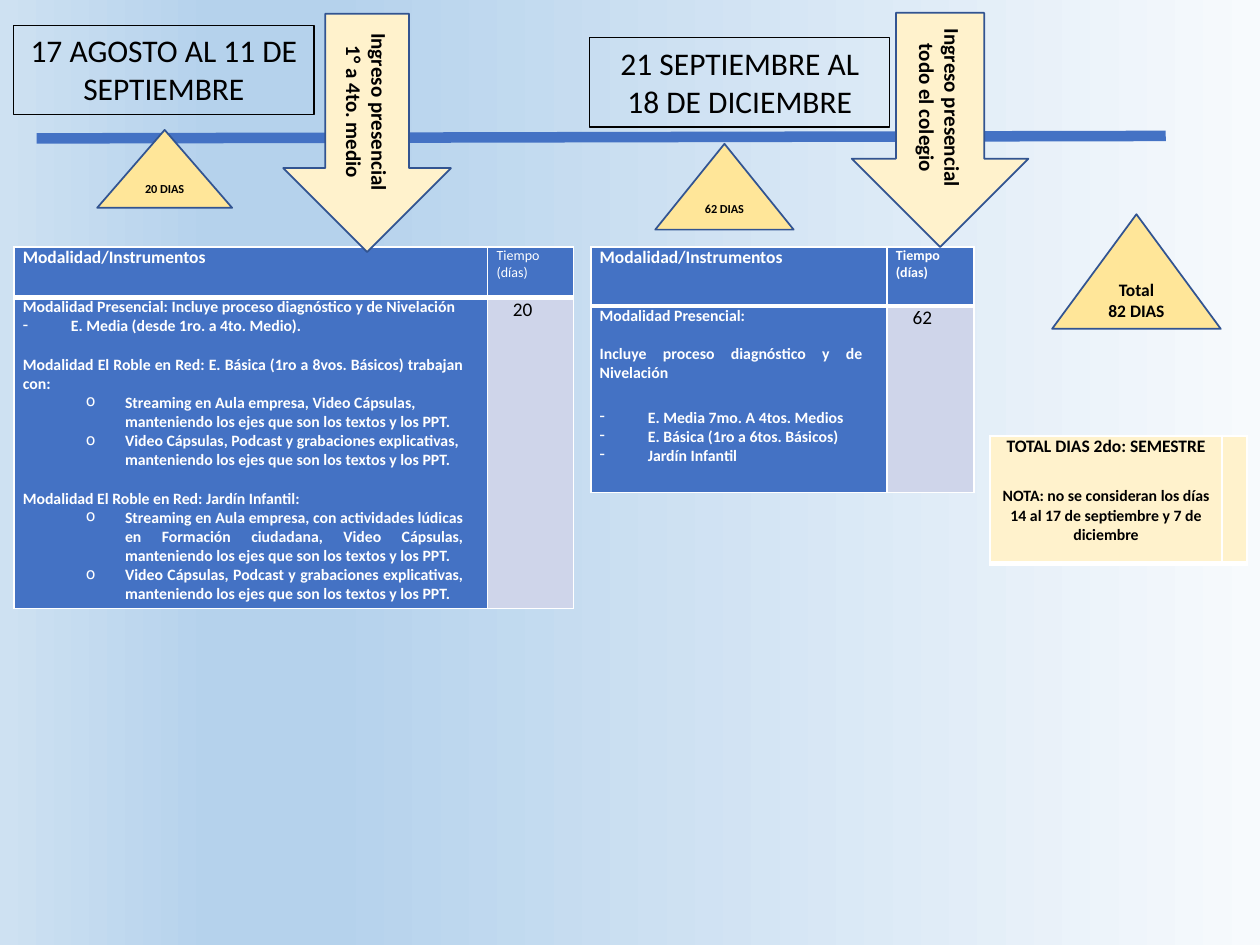
import dataclasses

import pptx
import pptx.dml.color
import pptx.enum.shapes
import pptx.enum.text
import pptx.oxml
import pptx.oxml.ns
import pptx.util
from pptx.util import Cm

SHAPE = pptx.enum.shapes.MSO_SHAPE
ALIGN = pptx.enum.text.PP_ALIGN
ANCHOR = pptx.enum.text.MSO_ANCHOR
NAMESPACE = pptx.oxml.ns.nsdecls("a")

COLORS = {
    "black": "000000", "white": "FFFFFF", "blue": "4472C4", "outline": "325491",
    "lavender": "CFD5EA", "gold": "FFE699", "cream": "FFF2CC",
}
BACKGROUND_STOPS = [(0, "F7FAFD"), (74, "B5D2EC"), (83, "B5D2EC"), (100, "CEE1F2")]
BULLET_INDENTS = {"-": (0.97, 0.97), "o": (2.06, 0.79)}  # left edge, hanging part


@dataclasses.dataclass
class Line:
    text: str
    size: float = 9
    bold: bool = True
    color: str = "white"
    align: ALIGN = ALIGN.JUSTIFY
    bullet: str = ""
    gap: float = 0


@dataclasses.dataclass
class CellContent:
    lines: list
    fill: str
    right_margin: float = 0.18


class TimelineSlide:
    def __init__(self, slide, font="Calibri"):
        self.slide = slide
        self.font = font

    def rgb(self, name):
        return pptx.dml.color.RGBColor.from_string(COLORS[name])

    def background(self, stops):
        fill = self.slide.background.fill
        fill.gradient()
        fill.gradient_angle = 180
        stop_list = next(self.slide.element.iter(pptx.oxml.ns.qn("a:gsLst")))
        for old_stop in list(stop_list):
            stop_list.remove(old_stop)
        for position, color in stops:
            stop_list.append(pptx.oxml.parse_xml(
                f'<a:gs {NAMESPACE} pos="{position * 1000}"><a:srgbClr val="{color}"/></a:gs>'))

    def set_lines(self, frame, lines):
        frame.word_wrap = True
        for index, line in enumerate(lines):
            para = frame.add_paragraph() if index else frame.paragraphs[0]
            para.text = line.text
            para.alignment = line.align
            para.space_before = pptx.util.Pt(line.gap)
            for span in para.runs:
                span.font.name = self.font
                span.font.size = pptx.util.Pt(line.size)
                span.font.bold = line.bold
                span.font.color.rgb = self.rgb(line.color)
            if line.bullet:
                self.bullet(para, line.bullet)

    def bullet(self, para, mark):
        left, hanging = BULLET_INDENTS[mark]
        properties = para._p.get_or_add_pPr()
        properties.set("marL", str(Cm(left)))
        properties.set("indent", str(-Cm(hanging)))
        properties.append(pptx.oxml.parse_xml(f'<a:buChar {NAMESPACE} char="{mark}"/>'))

    def axis(self, start, end):
        line = self.slide.shapes.add_connector(
            pptx.enum.shapes.MSO_CONNECTOR.STRAIGHT, *map(Cm, start + end))
        line.line.color.rgb = self.rgb("blue")
        line.line.width = pptx.util.Pt(6)
        line._element.spPr.append(pptx.oxml.parse_xml(f"<a:effectLst {NAMESPACE}/>"))

    def period(self, left, top, text):
        box = self.slide.shapes.add_textbox(Cm(left), Cm(top), Cm(6.05), Cm(1.8))
        box.line.color.rgb = self.rgb("black")
        box.line.width = pptx.util.Pt(0.75)
        self.set_lines(box.text_frame, [Line(text, 18, False, "black", ALIGN.CENTER)])
        box.text_frame.auto_size = pptx.enum.text.MSO_AUTO_SIZE.SHAPE_TO_FIT_TEXT

    def marker(self, kind, place, text, size, fill, rotation=0):
        shape = self.slide.shapes.add_shape(kind, *map(Cm, place))
        shape.rotation = rotation
        shape.shadow.inherit = False
        shape.fill.solid()
        shape.fill.fore_color.rgb = self.rgb(fill)
        shape.line.color.rgb = self.rgb("outline")
        shape.line.width = pptx.util.Pt(1)
        shape.text_frame.vertical_anchor = ANCHOR.MIDDLE
        self.set_lines(shape.text_frame, [Line(text, size, True, "black", ALIGN.CENTER)])

    def borders(self, cell, widths):
        properties = cell._tc.get_or_add_tcPr()
        for side, points in widths.items():
            properties.append(pptx.oxml.parse_xml(
                f'<a:ln{side} {NAMESPACE} w="{pptx.util.Pt(points)}"><a:solidFill>'
                f'<a:srgbClr val="{COLORS["white"]}"/></a:solidFill></a:ln{side}>'))

    def table(self, left, top, widths, heights, rows):
        frame = self.slide.shapes.add_table(
            len(heights), len(widths), Cm(left), Cm(top), Cm(sum(widths)), Cm(sum(heights)))
        table = frame.table
        table.first_row = table.horz_banding = False
        for column, width in zip(table.columns, widths):
            column.width = Cm(width)
        for row, height in zip(table.rows, heights):
            row.height = Cm(height)
        for row_index, contents in enumerate(rows):
            edges = {"B": 1} if row_index else {"T": 1, "B": 3}
            for column_index, content in enumerate(contents):
                cell = table.cell(row_index, column_index)
                self.borders(cell, {"L": 1, "R": 1, **edges})
                cell.fill.solid()
                cell.fill.fore_color.rgb = self.rgb(content.fill)
                cell.margin_left = Cm(0.18)
                cell.margin_right = Cm(content.right_margin)
                cell.margin_top = cell.margin_bottom = 0
                self.set_lines(cell.text_frame, content.lines)

    def plan(self, left, widths, heights, days, lines, bold_time):
        """Table of teaching modes beside the number of days they take."""
        header = [CellContent([Line("Modalidad/Instrumentos", 10)], "blue"),
                  CellContent([Line("Tiempo (días)", 8, bold_time)], "blue")]
        total = Line(days, 11, False, "black", ALIGN.CENTER)
        body = [CellContent(lines, "blue", 0.5), CellContent([total], "lavender", 0.5)]
        self.table(left, 4.98, widths, heights, [header, body])


def main():
    deck = pptx.Presentation()
    deck.slide_width, deck.slide_height = Cm(25.4), Cm(19.05)
    page = TimelineSlide(deck.slides.add_slide(deck.slide_layouts[6]))
    page.background(BACKGROUND_STOPS)
    page.axis((0.74, 2.79), (23.5, 2.74))

    page.period(0.28, 0.51, "17 AGOSTO AL 11 DE SEPTIEMBRE")
    page.period(11.89, 0.76, "21 SEPTIEMBRE AL 18 DE DICIEMBRE")
    for place, text, size in [
        ((1.96, 2.62, 2.72, 1.57), "20 DIAS", 7),
        ((13.21, 2.9, 2.79, 1.73), "62 DIAS", 7),
        ((21.21, 4.32, 3.4, 2.31), "Total\v82 DIAS", 10),
    ]:
        page.marker(SHAPE.ISOSCELES_TRIANGLE, place, text, size, "gold")

    materials = "manteniendo los ejes que son los textos y los PPT."
    podcasts = f"Video Cápsulas, Podcast y grabaciones explicativas, {materials}"
    page.plan(0.28, (9.55, 1.73), (1.02, 6.27), "20", [
        Line("Modalidad Presencial: Incluye proceso diagnóstico y de Nivelación"),
        Line("E. Media (desde 1ro. a 4to. Medio).", bullet="-"),
        Line("Modalidad El Roble en Red: E. Básica (1ro a 8vos. Básicos) trabajan con:", gap=11),
        Line(f"Streaming en Aula empresa, Video Cápsulas, {materials}",
             align=ALIGN.LEFT, bullet="o"),
        Line(podcasts, align=ALIGN.LEFT, bullet="o"),
        Line("Modalidad El Roble en Red: Jardín Infantil:", gap=11),
        Line("Streaming en Aula empresa, con actividades lúdicas en Formación ciudadana, "
             f"Video Cápsulas, {materials}", bullet="o"),
        Line(podcasts, bullet="o"),
    ], bold_time=False)
    page.plan(11.91, (5.97, 1.75), (1.19, 3.76), "62", [
        Line("Modalidad Presencial:"),
        Line("Incluye proceso diagnóstico y de Nivelación", gap=11),
        Line("E. Media 7mo. A 4tos. Medios", bullet="-", gap=14.6),
        Line("E. Básica (1ro a 6tos. Básicos)", bullet="-"),
        Line("Jardín Infantil", bullet="-"),
    ], bold_time=True)

    summary = [
        Line("TOTAL DIAS 2do: SEMESTRE", 10, color="black", align=ALIGN.CENTER),
        Line("NOTA: no se consideran los días 14 al 17 de septiembre y 7 de diciembre",
             color="black", align=ALIGN.CENTER, gap=17),
    ]
    page.table(19.96, 8.79, (4.67, 0.51), (2.57,),
               [[CellContent(summary, "cream"), CellContent([], "cream")]])

    for place, text in [
        ((5, 0.99, 4.8, 3.38), "Ingreso presencial 1° a 4to. medio"),
        ((16.59, 0.84, 4.72, 3.56), "Ingreso presencial todo el colegio"),
    ]:
        page.marker(SHAPE.RIGHT_ARROW, place, text, 12, "cream", rotation=90)

    deck.save("out.pptx")


if __name__ == "__main__":
    main()
